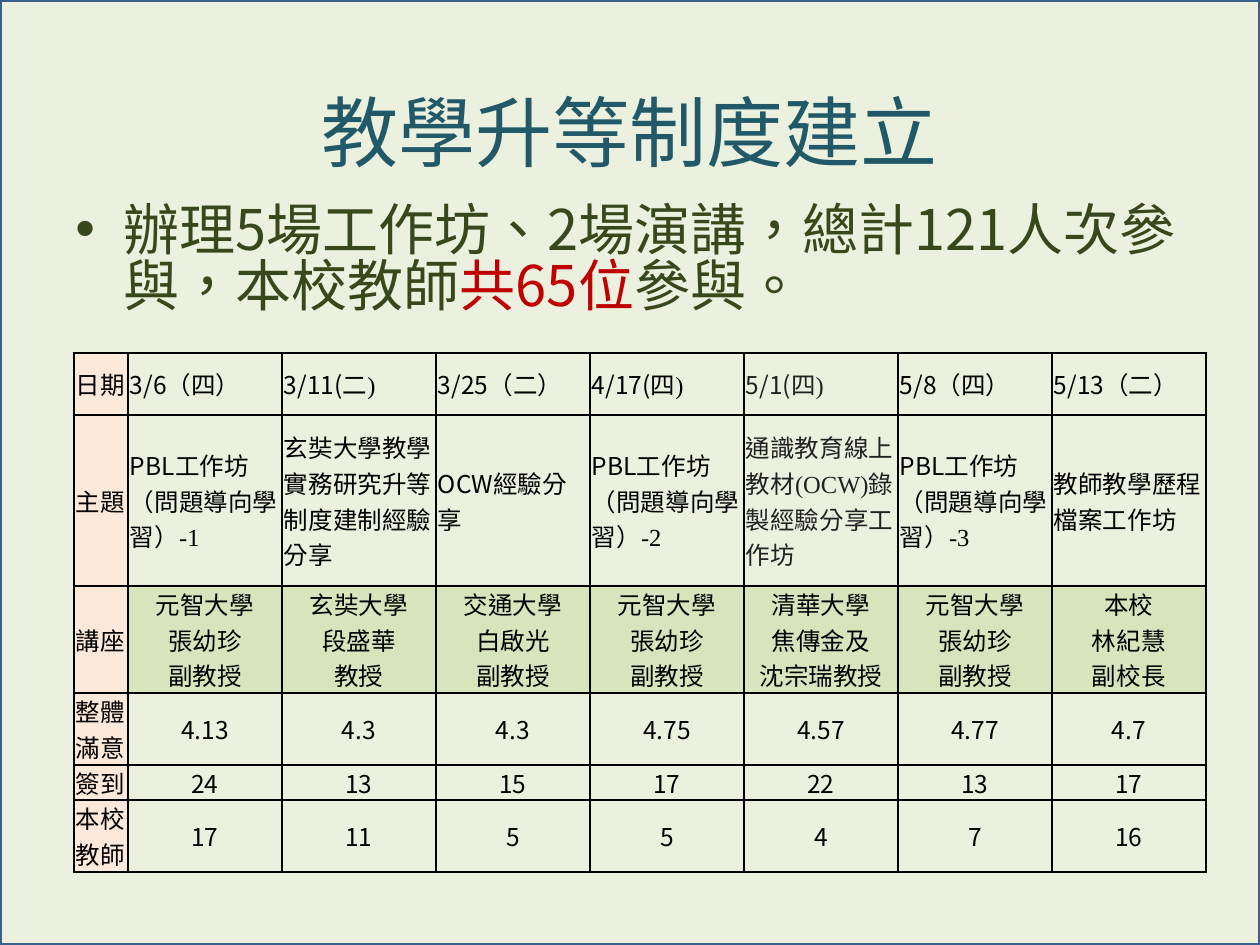
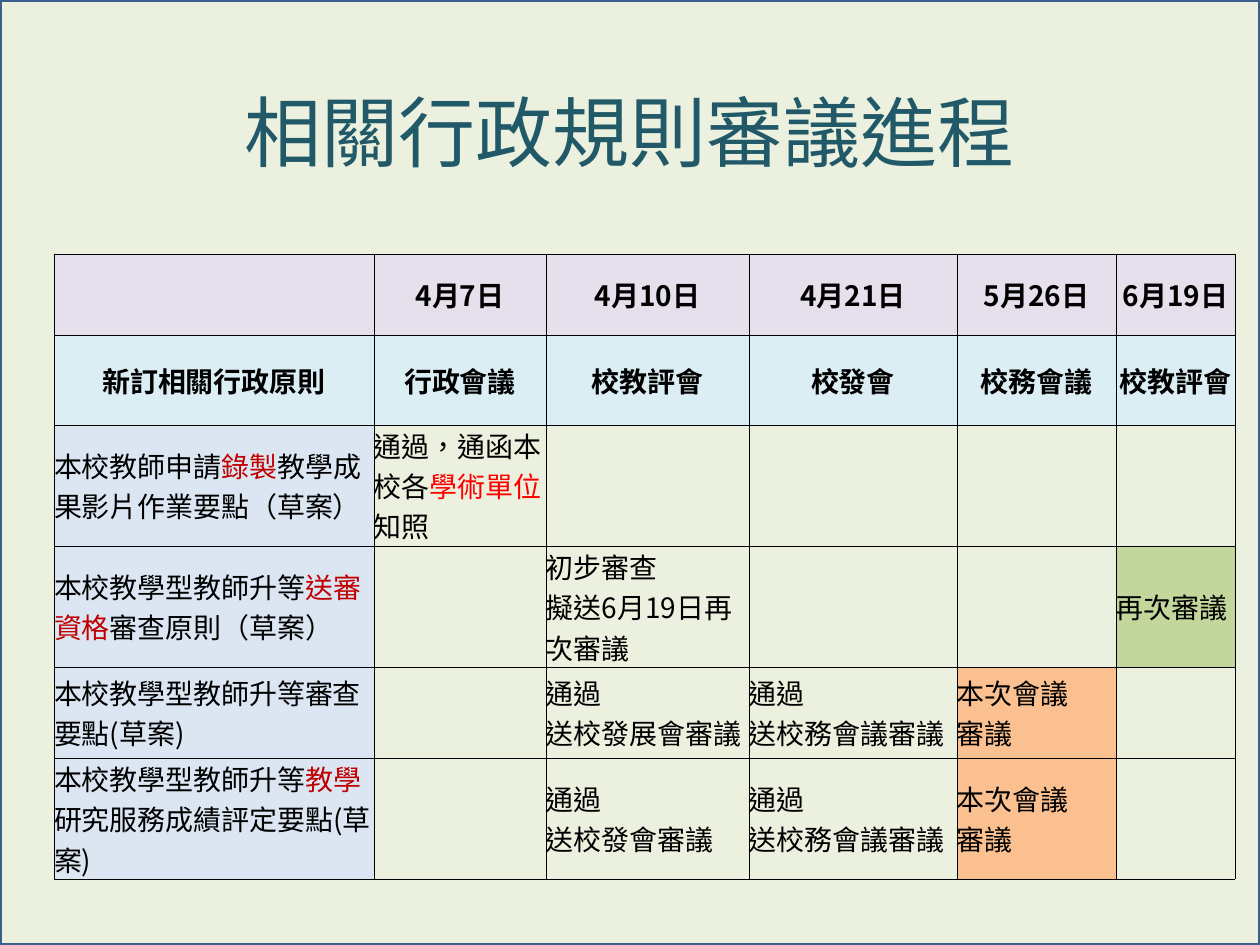
from dataclasses import dataclass
from typing import Optional

from lxml.etree import SubElement
from pptx import Presentation
from pptx.dml.color import RGBColor
from pptx.enum.shapes import MSO_SHAPE
from pptx.enum.text import MSO_ANCHOR, PP_ALIGN
from pptx.oxml.ns import qn
from pptx.util import Pt

EMU_PER_PX = 914400 / 126
WIDTH, HEIGHT = 1260, 945

SANS = "Noto Sans CJK SC"
SERIF = "Times New Roman"

PAGE = RGBColor(0xEB, 0xF1, 0xDE)
FRAME = RGBColor(0x3A, 0x5F, 0x8C)
TITLE = RGBColor(0x21, 0x59, 0x68)
BODY = RGBColor(0x39, 0x47, 0x1D)
BLACK = RGBColor(0, 0, 0)
CHARCOAL = RGBColor(0x22, 0x22, 0x22)
DARK_RED = RGBColor(0xC0, 0, 0)
RED = RGBColor(0xFF, 0, 0)
PEACH = RGBColor(0xFD, 0xE9, 0xD9)
LIME = RGBColor(0xD7, 0xE4, 0xBC)
LILAC = RGBColor(0xE6, 0xE0, 0xEC)
AQUA = RGBColor(0xDB, 0xEE, 0xF4)
PALE_BLUE = RGBColor(0xDC, 0xE6, 0xF2)
GREEN = RGBColor(0xC3, 0xD6, 0x9B)
ORANGE = RGBColor(0xFA, 0xC0, 0x90)


def px(n):
    return round(n * EMU_PER_PX)


@dataclass
class Run:
    text: str
    color: Optional[RGBColor] = None
    font: Optional[str] = None


@dataclass
class CellStyle:
    fill: Optional[RGBColor] = None
    align: PP_ALIGN = PP_ALIGN.LEFT
    bold: bool = False
    font: str = SANS


class Deck:
    def __init__(self):
        self.prs = Presentation()
        self.prs.slide_width, self.prs.slide_height = px(WIDTH), px(HEIGHT)
        self.s = None

    def slide(self, title):
        self.s = self.prs.slides.add_slide(self.prs.slide_layouts[5])
        self.backdrop()
        sp = self.s.shapes.title
        sp.left, sp.top, sp.width, sp.height = px(63), px(67), px(1134), px(127)
        tf = sp.text_frame
        tf.vertical_anchor = MSO_ANCHOR.MIDDLE
        p = tf.paragraphs[0]
        p.alignment = PP_ALIGN.CENTER
        self.run(p, title, 44, TITLE)

    def backdrop(self):
        sp = self.s.shapes.add_shape(MSO_SHAPE.RECTANGLE, 0, 0, px(WIDTH), px(HEIGHT))
        sp.shadow.inherit = False
        sp.fill.solid()
        sp.fill.fore_color.rgb = PAGE
        sp.line.color.rgb = FRAME
        sp.line.width = Pt(2)
        self.s.shapes.element.insert(2, sp.element)

    def run(self, p, text, size, color, font=SANS, bold=False):
        r = p.add_run()
        r.text = text
        r.font.size = Pt(size)
        r.font.bold = bold
        r.font.color.rgb = color
        r.font.name = font
        rPr = r._r.get_or_add_rPr()
        rPr.set("lang", "zh-TW")
        SubElement(rPr, qn("a:ea"), typeface=SANS)

    def bullet(self, x, y, w, h, runs):
        tf = self.s.shapes.add_textbox(px(x), px(y), px(w), px(h)).text_frame
        tf.word_wrap = True
        p = tf.paragraphs[0]
        p.line_spacing = 0.84
        pPr = p._p.get_or_add_pPr()
        pPr.set("marL", str(px(48)))
        pPr.set("indent", str(-px(48)))
        SubElement(pPr, qn("a:buFont"), typeface="Arial")
        SubElement(pPr, qn("a:buChar"), char="•")
        for item in runs:
            self.run(p, item.text, 32, item.color or BODY)

    def table(self, x, y, cols, heights, rows, style, size, border, inset=0):
        frame = self.s.shapes.add_table(
            len(rows), len(cols), px(x), px(y), px(sum(cols)), px(sum(heights)))
        tbl = frame.table
        tbl.first_row = tbl.horz_banding = False
        for column, width in zip(tbl.columns, cols):
            column.width = px(width)
        for i, (row, height) in enumerate(zip(rows, heights)):
            tbl.rows[i].height = px(height)
            for j, content in enumerate(row):
                self.cell(tbl.cell(i, j), content, style(i, j), size, border, inset)

    def cell(self, cell, content, style, size, border, inset):
        cell.margin_left = cell.margin_right = px(inset)
        cell.margin_top = cell.margin_bottom = 0
        cell.vertical_anchor = MSO_ANCHOR.MIDDLE
        self.borders(cell, border)
        if style.fill is None:
            cell.fill.background()
        else:
            cell.fill.solid()
            cell.fill.fore_color.rgb = style.fill
        if not content:
            return
        if isinstance(content, str):
            paragraphs = [[Run(line)] for line in content.split("\n")]
        else:
            paragraphs = [content]
        tf = cell.text_frame
        for k, runs in enumerate(paragraphs):
            p = tf.add_paragraph() if k else tf.paragraphs[0]
            p.alignment = style.align
            for item in runs:
                self.run(p, item.text, size, item.color or BLACK,
                         item.font or style.font, style.bold)

    def borders(self, cell, width):
        tcPr = cell._tc.get_or_add_tcPr()
        for side in ("lnL", "lnR", "lnT", "lnB"):
            ln = SubElement(tcPr, qn("a:" + side), w=str(Pt(width)))
            fill = SubElement(ln, qn("a:solidFill"))
            SubElement(fill, qn("a:srgbClr"), val=str(BLACK))


def lead(latin, rest, color=None):
    return [Run(latin, color, SANS), Run(rest, color)]


def workshop(number):
    return lead("PBL", f"工作坊（問題導向學習）-{number}")


def marked(before, key, after, color=DARK_RED):
    return [Run(before), Run(key, color), Run(after)]


def workshop_style(i, j):
    if j == 0:
        return CellStyle(PEACH, font=SERIF)
    if i < 2:
        return CellStyle(font=SERIF)
    if i == 2:
        return CellStyle(LIME, PP_ALIGN.CENTER, font=SERIF)
    return CellStyle(align=PP_ALIGN.CENTER)


def review_style(i, j):
    if i < 2:
        return CellStyle((LILAC, AQUA)[i], PP_ALIGN.CENTER, bold=True)
    if j == 0:
        return CellStyle(PALE_BLUE)
    return CellStyle({(3, 5): GREEN, (4, 4): ORANGE, (5, 4): ORANGE}.get((i, j)))


def workshops_slide(deck):
    deck.slide("教學升等制度建立")
    deck.bullet(63, 199, 1134, 150, marked(
        "辦理5場工作坊、2場演講，總計121人次參與，本校教師", "共65位", "參與。"))
    pbl_speaker = "元智大學\n張幼珍\n副教授"
    rows = [
        ["日期", lead("3/6", "（四）"), lead("3/11(", "二)"), lead("3/25", "（二）"),
         lead("4/17(", "四)"), lead("5/1(", "四)", CHARCOAL), lead("5/8", "（四）"),
         lead("5/13", "（二）")],
        ["主題", workshop(1), "玄奘大學教學實務研究升等制度建制經驗分享",
         lead("OCW", "經驗分享"), workshop(2),
         [Run("通識教育線上教材(OCW)錄製經驗分享工作坊", CHARCOAL)], workshop(3),
         "教師教學歷程檔案工作坊"],
        ["講座", pbl_speaker, "玄奘大學\n段盛華\n教授", "交通大學\n白啟光\n副教授",
         pbl_speaker, "清華大學\n焦傳金及\n沈宗瑞教授", pbl_speaker,
         "本校\n林紀慧\n副校長"],
        ["整體滿意", "4.13", "4.3", "4.3", "4.75", "4.57", "4.77", "4.7"],
        ["簽到", "24", "13", "15", "17", "22", "13", "17"],
        ["本校教師", "17", "11", "5", "5", "4", "7", "16"],
    ]
    deck.table(74, 353, [54] + [154] * 7, [62, 171, 107, 72, 35, 72],
               rows, workshop_style, size=14, border=1, inset=2)


def review_slide(deck):
    deck.slide("相關行政規則審議進程")
    to_council = "通過\n送校務會議審議"
    this_meeting = "本次會議\n審議"
    rows = [
        ["", "4月7日", "4月10日", "4月21日", "5月26日", "6月19日"],
        ["新訂相關行政原則", "行政會議", "校教評會", "校發會", "校務會議", "校教評會"],
        [marked("本校教師申請", "錄製", "教學成果影片作業要點（草案）"),
         marked("通過，通函本校各", "學術單位", "知照", RED), "", "", "", ""],
        [marked("本校教學型教師升等", "送審資格", "審查原則（草案）"), "",
         "初步審查\n擬送6月19日再次審議", "", "", "再次審議"],
        ["本校教學型教師升等審查要點(草案)", "", "通過\n送校發展會審議",
         to_council, this_meeting, ""],
        [marked("本校教學型教師升等", "教學", "研究服務成績評定要點(草案)"), "",
         "通過\n送校發會審議", to_council, this_meeting, ""],
    ]
    deck.table(54, 254, [320, 172, 203, 208, 159, 119], [81, 90, 121, 121, 91, 121],
               rows, review_style, size=16, border=0.5)


def main():
    deck = Deck()
    workshops_slide(deck)
    review_slide(deck)
    deck.prs.save("out.pptx")


if __name__ == "__main__":
    main()
